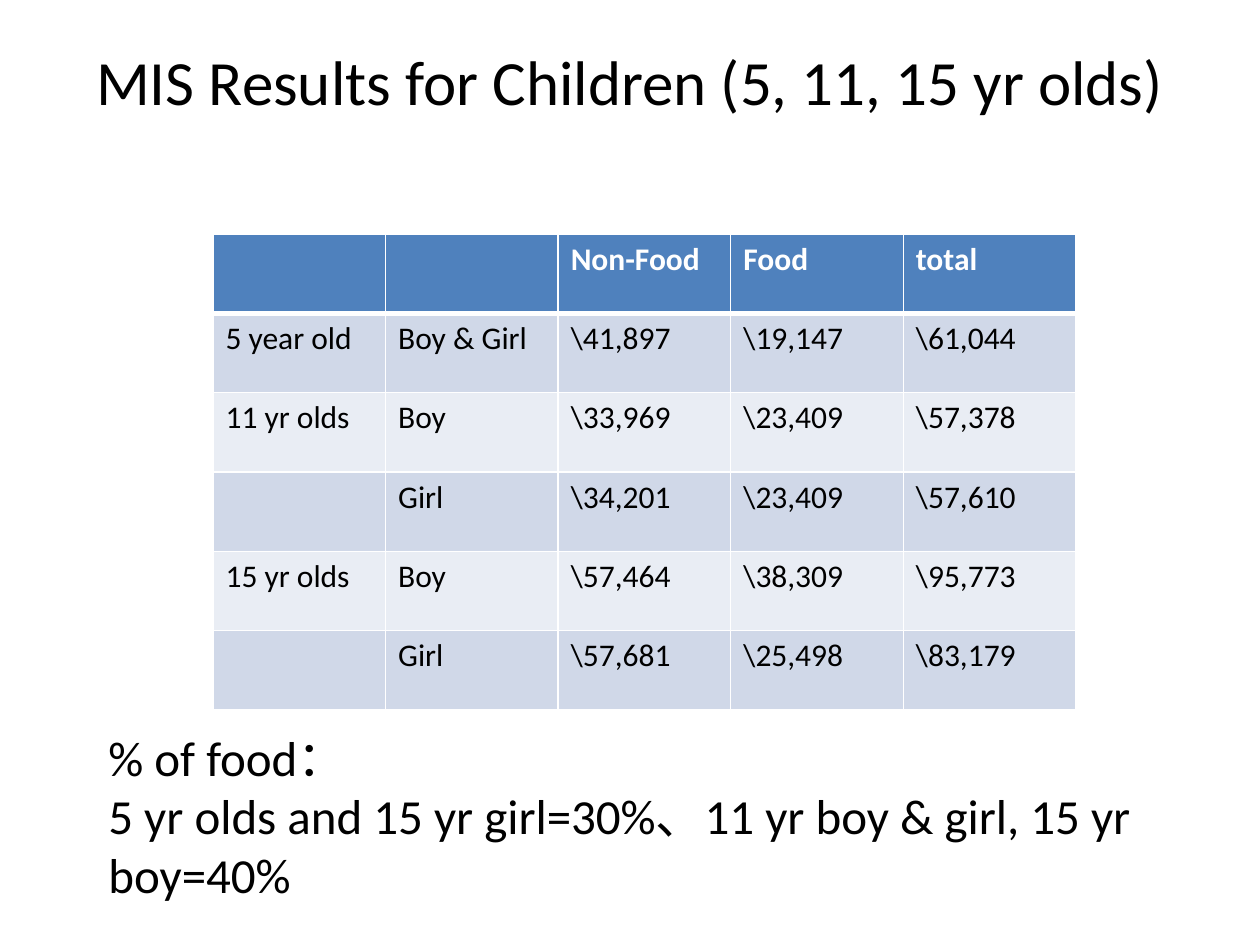
from dataclasses import dataclass

from lxml import etree
from pptx import Presentation
from pptx import util as u
from pptx.dml.color import RGBColor
from pptx.enum import text
from pptx.oxml.ns import qn

EMU_PER_PX = 914400 / 126
FONT = "Calibri"
COLORS = {
    "black": "000000",
    "white": "FFFFFF",
    "header": "4F81BD",
    "odd": "D0D8E8",
    "even": "E9EDF4",
}


@dataclass(frozen=True)
class Box:
    left: int
    top: int
    width: int
    height: int

    def emu(self) -> list[int]:
        return [px(n) for n in (self.left, self.top, self.width, self.height)]


@dataclass(frozen=True)
class TextBlock:
    box: Box
    lines: tuple[str, ...]
    size: int
    align: text.PP_ALIGN
    anchor: text.MSO_ANCHOR


SLIDE = Box(0, 0, 1260, 945)
TABLE = Box(213, 234, 863, 476)
TEXT_BLOCKS = [
    TextBlock(
        Box(63, 20, 1134, 120),
        ("MIS Results for Children (5, 11, 15 yr olds)",),
        36, text.PP_ALIGN.CENTER, text.MSO_ANCHOR.MIDDLE,
    ),
    TextBlock(
        Box(96, 721, 1164, 190),
        ("% of food：", "5 yr olds and 15 yr girl=30%、11 yr boy & girl, 15 yr boy=40%"),
        28, text.PP_ALIGN.LEFT, text.MSO_ANCHOR.TOP,
    ),
]
ROWS = [
    ("", "", "Non-Food", "Food", "total"),
    ("5 year old", "Boy & Girl", "\\41,897", "\\19,147", "\\61,044"),
    ("11 yr olds", "Boy", "\\33,969", "\\23,409", "\\57,378"),
    ("", "Girl", "\\34,201", "\\23,409", "\\57,610"),
    ("15 yr olds", "Boy", "\\57,464", "\\38,309", "\\95,773"),
    ("", "Girl", "\\57,681", "\\25,498", "\\83,179"),
]


def px(length: int) -> int:
    return round(length * EMU_PER_PX)


def color(name: str) -> RGBColor:
    return RGBColor.from_string(COLORS[name])


def style_font(font, size: int, color_name: str, bold: bool = False) -> None:
    font.name = FONT
    font.size = u.Pt(size)
    font.bold = bold
    font.color.rgb = color(color_name)


def draw_text(slide, block: TextBlock) -> None:
    frame = slide.shapes.add_textbox(*block.box.emu()).text_frame
    frame.word_wrap = True
    frame.vertical_anchor = block.anchor
    frame.text = "\n".join(block.lines)
    for paragraph in frame.paragraphs:
        paragraph.alignment = block.align
        style_font(paragraph.font, block.size, "black")


def add_border(cell, side: str, points: int) -> None:
    properties = cell._tc.get_or_add_tcPr()
    line = etree.SubElement(properties, qn(f"a:ln{side}"), w=str(u.Pt(points)))
    fill = etree.SubElement(line, qn("a:solidFill"))
    etree.SubElement(fill, qn("a:srgbClr"), val=COLORS["white"])


def draw_table(slide, box: Box, rows: list[tuple[str, ...]]) -> None:
    table = slide.shapes.add_table(len(rows), len(rows[0]), *box.emu()).table
    for row_index, row in enumerate(rows):
        is_header = row_index == 0
        fill_name = "header" if is_header else "odd" if row_index % 2 else "even"
        for column_index, value in enumerate(row):
            cell = table.cell(row_index, column_index)
            for side in "LRTB":
                thick = (is_header and side == "B") or (row_index == 1 and side == "T")
                add_border(cell, side, 3 if thick else 1)
            cell.fill.solid()
            cell.fill.fore_color.rgb = color(fill_name)
            cell.text = value
            style_font(
                cell.text_frame.paragraphs[0].font,
                18, "white" if is_header else "black", is_header,
            )


def main() -> None:
    presentation = Presentation()
    presentation.slide_width = px(SLIDE.width)
    presentation.slide_height = px(SLIDE.height)
    slide = presentation.slides.add_slide(presentation.slide_layouts[6])
    for block in TEXT_BLOCKS:
        draw_text(slide, block)
    draw_table(slide, TABLE, ROWS)
    presentation.save("out.pptx")


if __name__ == "__main__":
    main()
